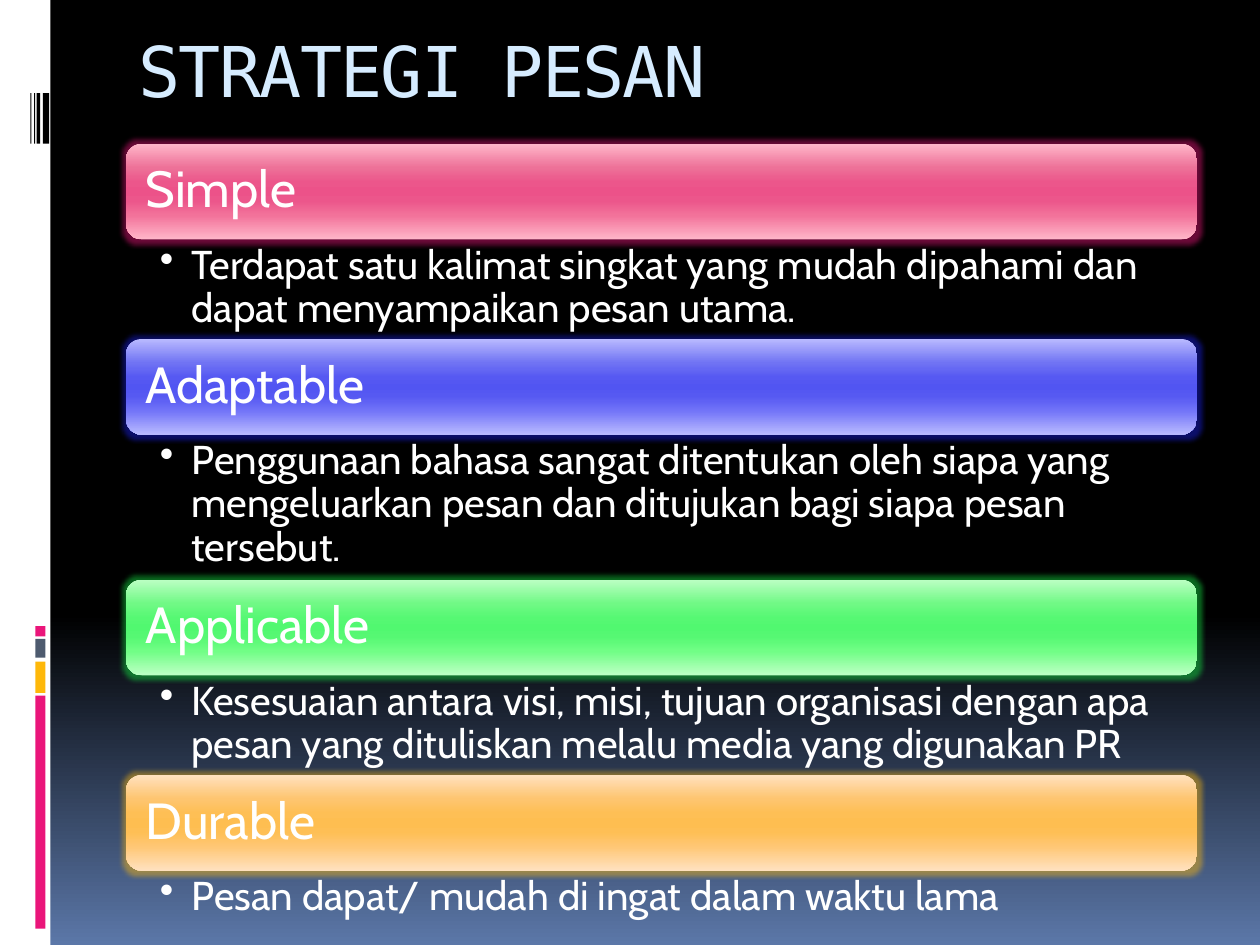
from lxml import etree
from pptx import Presentation
from pptx import util as u
from pptx.dml.color import RGBColor
from pptx.enum import shapes, text
from pptx.oxml.ns import qn

WHITE = RGBColor(0xFF, 0xFF, 0xFF)
BLACK = RGBColor(0, 0, 0)
PINK = RGBColor(0xEA, 0x15, 0x7A)
AMBER = RGBColor(0xFE, 0xB8, 0x0A)
SLATE = RGBColor(0x4E, 0x5B, 0x6F)
BLUE = RGBColor(0x1A, 0x20, 0xEB)
GREEN = RGBColor(0x15, 0xEA, 0x45)
ICE = RGBColor(0xD6, 0xEC, 0xFF)
BG_STOPS = [(0, "000000"), (65, "000000"), (100, "5B77A8")]

BODY_FONT, TITLE_FONT = "Cabin", "DejaVu Sans Mono"
LEFT, WIDTH, BAR_H, FIRST_TOP = 1, 8.5, 0.76, 1.14
BAR_POSITIONS = (0, 25, 40, 50, 60, 75, 100)

# Left, top, width, height, colour of the left-hand decoration
DECORATION = [
    (0, 0, 0.4, 7.5, WHITE),
    (0.28, 5.52, 0.08, 1.85, PINK),
    (0.28, 5.25, 0.08, 0.25, AMBER),
    (0.28, 5.07, 0.08, 0.15, SLATE),
    (0.28, 4.97, 0.08, 0.08, PINK),
    (0.34, 0.74, 0.05, 0.4, BLACK),
    (0.29, 0.74, 0.03, 0.4, BLACK),
    (0.27, 0.74, 0.01, 0.4, BLACK),
    (0.24, 0.74, 0.01, 0.4, BLACK),
]

# Heading, explanation, height of explanation, glow, bar gradient colours
STRATEGIES = [
    ("Simple",
     "Terdapat satu kalimat singkat yang mudah dipahami dan dapat "
     "menyampaikan pesan utama.",
     0.79, PINK, "FFB6C9 ED7198 EC568B EC5289 EC568B F2729A FFB6C9"),
    ("Adaptable",
     "Penggunaan bahasa sangat ditentukan oleh siapa yang mengeluarkan "
     "pesan dan ditujukan bagi siapa pesan tersebut.",
     1.15, BLUE, "B9BAFF 7073F3 5659F2 5155F2 5659F2 7274F8 B9BAFF"),
    ("Applicable",
     "Kesesuaian antara visi, misi, tujuan organisasi dengan apa pesan "
     "yang dituliskan melalu media yang digunakan PR",
     0.79, GREEN, "BCFFC4 70F985 56F873 51F870 56F873 71FE86 BCFFC4"),
    ("Durable",
     "Pesan dapat/ mudah di ingat dalam waktu lama",
     0.53, AMBER, "FFE1BF FEC570 FEBF55 FEBE51 FEBF55 FFC775 FFE1BF"),
]


def inches(*values):
    return [u.Inches(v) for v in values]


def set_gradient(fill, element, stops):
    """Fill from top to bottom with (percent, colour) stops."""
    fill.gradient()
    fill.gradient_angle = 270
    gs_lst = element.find(".//" + qn("a:gsLst"))
    for gs in list(gs_lst):
        gs_lst.remove(gs)
    for pos, color in stops:
        gs = etree.SubElement(gs_lst, qn("a:gs"), pos=str(pos * 1000))
        etree.SubElement(gs, qn("a:srgbClr"), val=color)


def add_glow(sp, color):
    effects = sp._element.spPr.find(qn("a:effectLst"))
    glow = etree.SubElement(effects, qn("a:glow"), rad=str(u.Pt(5)))
    clr = etree.SubElement(glow, qn("a:srgbClr"), val=str(color))
    etree.SubElement(clr, qn("a:alpha"), val="45000")


def add_box(s, kind, box):
    sp = s.shapes.add_shape(kind, *inches(*box))
    sp.shadow.inherit = False
    sp.line.fill.background()
    return sp


def set_margins(tf, left, top, right, bottom):
    tf.word_wrap = True
    (tf.margin_left, tf.margin_top,
     tf.margin_right, tf.margin_bottom) = inches(left, top, right, bottom)


def add_run(p, words, size, font=BODY_FONT, color=WHITE):
    r = p.add_run()
    r.text = words
    r.font.size = u.Pt(size)
    r.font.name = font
    r.font.color.rgb = color
    return r


def add_title(s, words):
    sp = s.shapes.title
    sp.left, sp.top, sp.width, sp.height = inches(1, 0.13, 8.5, 1)
    tf = sp.text_frame
    set_margins(tf, 0.1, 0.09, 0.1, 0.05)
    tf.auto_size = text.MSO_AUTO_SIZE.NONE
    tf.vertical_anchor = text.MSO_ANCHOR.TOP
    p = tf.paragraphs[0]
    p.alignment = text.PP_ALIGN.LEFT
    r = add_run(p, words, 40, TITLE_FONT, ICE)
    r.font._element.set("spc", "-100")


def add_bar(s, top, heading, glow, colors):
    sp = add_box(s, shapes.MSO_SHAPE.ROUNDED_RECTANGLE,
                 (LEFT, top, WIDTH, BAR_H))
    set_gradient(sp.fill, sp._element, zip(BAR_POSITIONS, colors.split()))
    add_glow(sp, glow)
    tf = sp.text_frame
    # The rounded corners already inset the text by about 0.04 inch
    set_margins(tf, 0.12, 0.12, 0.12, 0.12)
    tf.vertical_anchor = text.MSO_ANCHOR.MIDDLE
    p = tf.paragraphs[0]
    p.alignment = text.PP_ALIGN.LEFT
    p.line_spacing = 0.9
    add_run(p, heading, 29)


def add_explanation(s, top, height, words):
    sp = s.shapes.add_textbox(*inches(LEFT, top, WIDTH, height))
    tf = sp.text_frame
    set_margins(tf, 0.27, 0.04, 0.23, 0.04)
    p = tf.paragraphs[0]
    p.line_spacing = 0.9
    pPr = p._p.get_or_add_pPr()
    pPr.set("marL", str(u.Inches(0.25)))
    pPr.set("indent", str(u.Inches(-0.25)))
    etree.SubElement(pPr, qn("a:buChar"), char="•")
    add_run(p, words, 23)


def main():
    prs = Presentation()
    prs.slide_width, prs.slide_height = inches(10, 7.5)
    s = prs.slides.add_slide(prs.slide_layouts.get_by_name("Title Only"))
    set_gradient(s.background.fill, s._element, BG_STOPS)

    # Left-hand strip with its colour blocks and barcode
    for *box, color in DECORATION:
        sp = add_box(s, shapes.MSO_SHAPE.RECTANGLE, box)
        sp.fill.solid()
        sp.fill.fore_color.rgb = color

    add_title(s, "STRATEGI PESAN")

    # Stacked bars, each followed by its explanation
    top = FIRST_TOP
    for heading, words, height, glow, colors in STRATEGIES:
        add_bar(s, top, heading, glow, colors)
        add_explanation(s, top + BAR_H, height, words)
        top += BAR_H + height

    prs.save("out.pptx")


if __name__ == "__main__":
    main()
